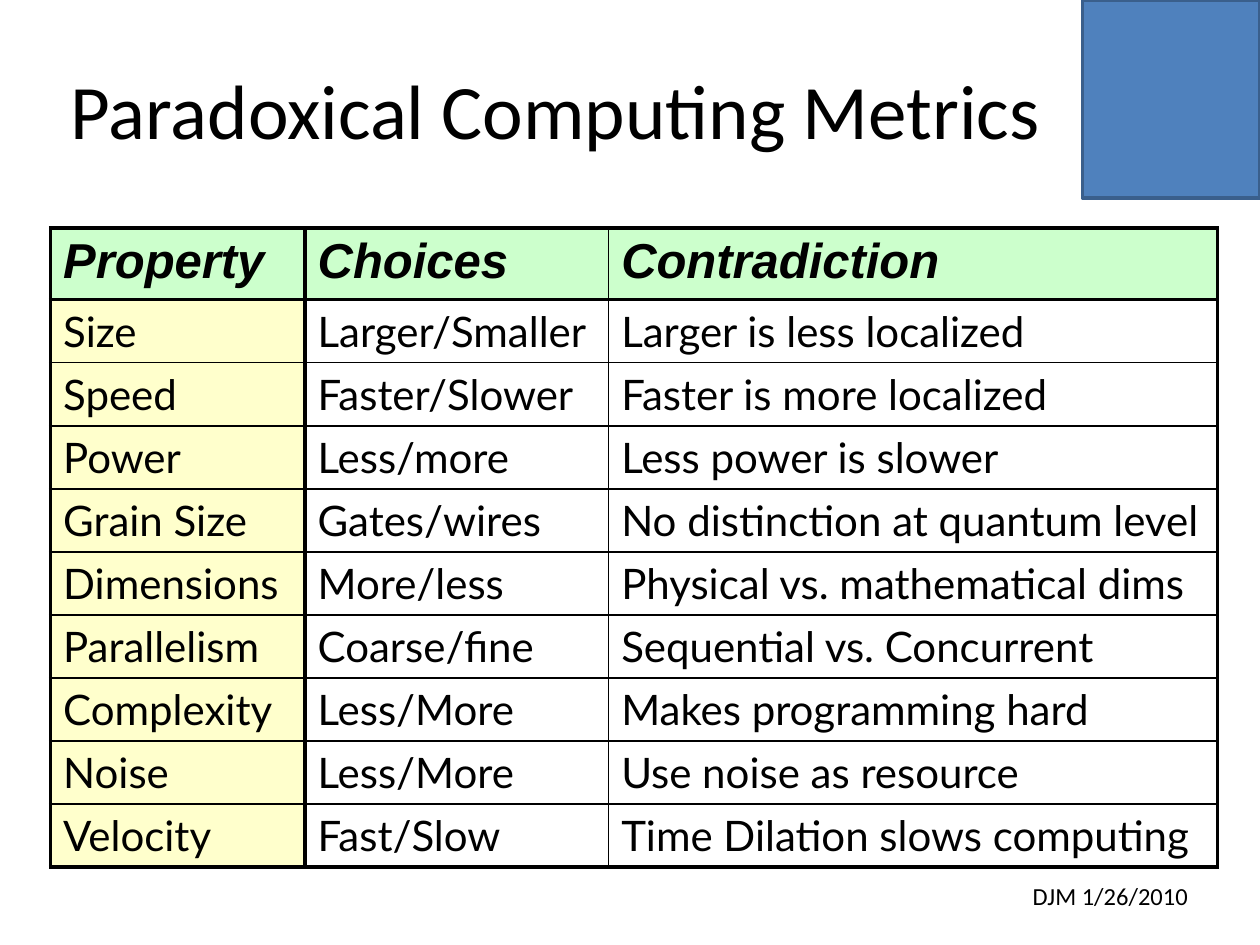
"""Build the Paradoxical Computing Metrics slide."""

from dataclasses import dataclass

from lxml.etree import SubElement
from pptx import Presentation
from pptx.dml.color import RGBColor as Rgb
from pptx.enum.shapes import MSO_SHAPE as Shape
from pptx.enum.text import MSO_ANCHOR as Anchor, PP_ALIGN as Align
from pptx.oxml.ns import qn
from pptx.util import Cm, Pt


@dataclass(frozen=True)
class Style:
    font: str
    size: int
    bold: bool = False
    italic: bool = False


@dataclass(frozen=True)
class Theme:
    ink: str = "000000"
    header_fill: str = "CCFFCC"
    property_fill: str = "FFFFCC"
    corner_fill: str = "4F81BD"
    corner_line: str = "3A5F8C"
    thick: float = 2.25
    thin: float = 1
    title: Style = Style("Calibri", 44)
    footer: Style = Style("Calibri", 14)
    header: Style = Style("Arial", 28, bold=True, italic=True)
    body: Style = Style("Lato", 24)


@dataclass(frozen=True)
class Frame:
    left: float
    top: float
    width: float
    height: float

    def lengths(self) -> tuple:
        return Cm(self.left), Cm(self.top), Cm(self.width), Cm(self.height)


@dataclass(frozen=True)
class Label:
    text: str
    frame: Frame
    style: Style
    align: Align
    anchor: Anchor


@dataclass(frozen=True)
class Metric:
    name: str
    choices: str
    contradiction: str

    def texts(self) -> tuple:
        return self.name, self.choices, self.contradiction


THEME = Theme()
LABELS = [
    Label("DJM 1/26/2010", Frame(19.35, 17.63, 4.85, 0.86), THEME.footer, Align.RIGHT, Anchor.TOP),
    Label("Paradoxical Computing Metrics", Frame(1.09, 1.07, 20.22, 2.24), THEME.title,
          Align.CENTER, Anchor.MIDDLE),
]
CORNER = Frame(21.82, 0, 3.58, 3.99)
COLUMN_WIDTHS = (5.13, 6.12, 12.27)
HEADER_HEIGHT, ROW_HEIGHT = 1.35, 1.27
METRICS = [
    Metric("Property", "Choices", "Contradiction"),
    Metric("Size", "Larger/Smaller", "Larger is less localized"),
    Metric("Speed", "Faster/Slower", "Faster is more localized"),
    Metric("Power", "Less/more", "Less power is slower"),
    Metric("Grain Size", "Gates/wires", "No distinction at quantum level"),
    Metric("Dimensions", "More/less", "Physical vs. mathematical dims"),
    Metric("Parallelism", "Coarse/fine", "Sequential vs. Concurrent"),
    Metric("Complexity", "Less/More", "Makes programming hard"),
    Metric("Noise", "Less/More", "Use noise as resource"),
    Metric("Velocity", "Fast/Slow", "Time Dilation slows computing"),
]


def write_text(text_frame, text: str, style: Style, align: Align = Align.LEFT) -> None:
    text_frame.text = text
    para = text_frame.paragraphs[0]
    para.alignment = align
    for span in para.runs:
        span.font.name = style.font
        span.font.size = Pt(style.size)
        span.font.bold = style.bold
        span.font.italic = style.italic
        span.font.color.rgb = Rgb.from_string(THEME.ink)


def draw_label(page, label: Label) -> None:
    box = page.shapes.add_textbox(*label.frame.lengths())
    box.text_frame.word_wrap = True
    box.text_frame.vertical_anchor = label.anchor
    write_text(box.text_frame, label.text, label.style, label.align)


def draw_corner(page, frame: Frame) -> None:
    square = page.shapes.add_shape(Shape.RECTANGLE, *frame.lengths())
    square.shadow.inherit = False
    square.fill.solid()
    square.fill.fore_color.rgb = Rgb.from_string(THEME.corner_fill)
    square.line.color.rgb = Rgb.from_string(THEME.corner_line)
    square.line.width = Pt(2)


def draw_borders(cell, thick_sides: dict[str, bool]) -> None:
    properties = cell._tc.get_or_add_tcPr()
    for side, is_thick in thick_sides.items():
        width = Pt(THEME.thick if is_thick else THEME.thin)
        line = SubElement(properties, qn(f"a:ln{side}"), w=str(width))
        fill = SubElement(line, qn("a:solidFill"))
        SubElement(fill, qn("a:srgbClr"), val=THEME.ink)


def fill_cell(cell, row: int, column: int) -> None:
    if row and column:
        cell.fill.background()
        return
    cell.fill.solid()
    color = THEME.property_fill if row else THEME.header_fill
    cell.fill.fore_color.rgb = Rgb.from_string(color)


def draw_table(page, metrics: list[Metric]) -> None:
    last_row, last_column = len(metrics) - 1, len(COLUMN_WIDTHS) - 1
    frame = Frame(1.02, 4.6, sum(COLUMN_WIDTHS), HEADER_HEIGHT + ROW_HEIGHT * last_row)
    table = page.shapes.add_table(len(metrics), len(COLUMN_WIDTHS), *frame.lengths()).table
    table.first_row = table.horz_banding = False
    for column, width in enumerate(COLUMN_WIDTHS):
        table.columns[column].width = Cm(width)
    for row, metric in enumerate(metrics):
        table.rows[row].height = Cm(ROW_HEIGHT if row else HEADER_HEIGHT)
        for column, text in enumerate(metric.texts()):
            cell = table.cell(row, column)
            write_text(cell.text_frame, text, THEME.body if row else THEME.header)
            draw_borders(cell, {
                "L": column <= 1,
                "R": column in (0, last_column),
                "T": row <= 1,
                "B": row in (0, last_row),
            })
            fill_cell(cell, row, column)


def main() -> None:
    deck = Presentation()
    deck.slide_width, deck.slide_height = Cm(25.4), Cm(19.05)
    page = deck.slides.add_slide(deck.slide_layouts[6])
    draw_corner(page, CORNER)
    for label in LABELS:
        draw_label(page, label)
    draw_table(page, METRICS)
    deck.save("out.pptx")


if __name__ == "__main__":
    main()
